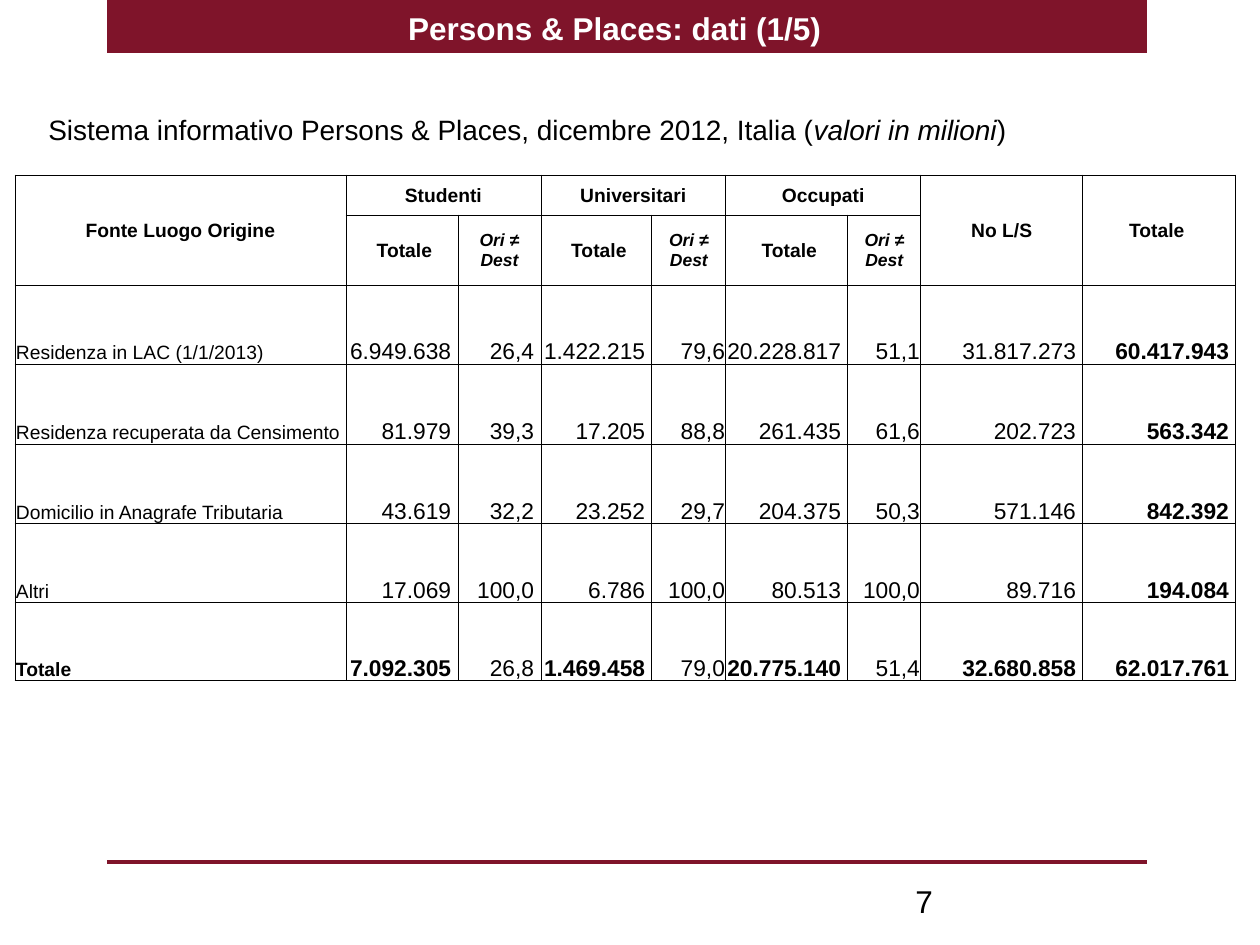
import pptx
import pptx.util
import pptx.dml.color
import pptx.enum.shapes
import pptx.enum.text
import pptx.oxml
import pptx.oxml.ns

COLORS = {"burgundy": "7F142A", "text": "000000", "title": "FFFFFF", "border": "000000"}
FONT = "Arial"
PIXELS_PER_INCH = 126
ALIGN = pptx.enum.text.PP_ALIGN
ANCHOR = pptx.enum.text.MSO_ANCHOR

COLUMN_WIDTHS = [331, 112, 83, 111, 74, 122, 73, 162, 153]
ROW_HEIGHTS = [40, 70, 79, 80, 80, 79, 78]
HEADER_ROWS = 2
TOTAL_ROW = len(ROW_HEIGHTS) - 1
PERCENT_COLUMNS = (2, 4, 6)
FLUSH_COLUMNS = (4, 6)
LAST_COLUMN = len(COLUMN_WIDTHS) - 1

GROUPS = ["Studenti", "Universitari", "Occupati"]
RECORDS = [
    ["Residenza in LAC (1/1/2013)", "6.949.638", "26,4", "1.422.215", "79,6",
     "20.228.817", "51,1", "31.817.273", "60.417.943"],
    ["Residenza recuperata da Censimento", "81.979", "39,3", "17.205", "88,8",
     "261.435", "61,6", "202.723", "563.342"],
    ["Domicilio in Anagrafe Tributaria", "43.619", "32,2", "23.252", "29,7",
     "204.375", "50,3", "571.146", "842.392"],
    ["Altri", "17.069", "100,0", "6.786", "100,0",
     "80.513", "100,0", "89.716", "194.084"],
    ["Totale", "7.092.305", "26,8", "1.469.458", "79,0",
     "20.775.140", "51,4", "32.680.858", "62.017.761"],
]


def px(value):
    return pptx.util.Emu(round(value * 914400 / PIXELS_PER_INCH))


def rgb(name):
    return pptx.dml.color.RGBColor.from_string(COLORS[name])


def set_attributes(target, values):
    for name, value in values.items():
        setattr(target, name, value)


def add_run(paragraph, text, size, color="text", **styles):
    run = paragraph.add_run()
    run.text = text
    set_attributes(run.font, {"name": FONT, "size": pptx.util.Pt(size), **styles})
    run.font.color.rgb = rgb(color)


def add_text(slide, box, runs, size, color="text", align=ALIGN.LEFT, **frame_values):
    shape = slide.shapes.add_textbox(*map(px, box))
    set_attributes(shape.text_frame, {"word_wrap": True, **frame_values})
    paragraph = shape.text_frame.paragraphs[0]
    paragraph.alignment = align
    for text, styles in runs:
        add_run(paragraph, text, size, color, **styles)


def add_band(slide, box):
    shape = slide.shapes.add_shape(
        pptx.enum.shapes.MSO_SHAPE.RECTANGLE, *map(px, box))
    shape.shadow.inherit = False
    shape.fill.solid()
    shape.fill.fore_color.rgb = rgb("burgundy")
    shape.line.fill.background()


def add_rule(slide, left, right, y):
    rule = slide.shapes.add_connector(
        pptx.enum.shapes.MSO_CONNECTOR.STRAIGHT, px(left), px(y), px(right), px(y))
    rule.line.color.rgb = rgb("burgundy")
    rule.line.width = pptx.util.Pt(2)
    properties = rule._element.spPr
    properties.append(properties.makeelement(pptx.oxml.ns.qn("a:effectLst"), {}))


def draw_borders(cell):
    properties = cell._tc.get_or_add_tcPr()
    for side in "LRTB":
        properties.append(pptx.oxml.parse_xml(
            f'<a:ln{side} {pptx.oxml.ns.nsdecls("a")} w="6350"><a:solidFill>'
            f'<a:srgbClr val="{COLORS["border"]}"/></a:solidFill></a:ln{side}>'))


def fill_cell(cell, text, size, align, anchor, left=1, right=1, **styles):
    set_attributes(cell, {
        "vertical_anchor": anchor,
        "margin_left": px(left),
        "margin_right": px(right),
        "margin_top": px(1),
        "margin_bottom": px(0),
    })
    paragraph = cell.text_frame.paragraphs[0]
    paragraph.alignment = align
    add_run(paragraph, text, size, **styles)


def fill_header_cell(cell, text, size=11, **options):
    fill_cell(cell, text, size, ALIGN.CENTER, ANCHOR.MIDDLE, bold=True, **options)


def fill_headers(table):
    for column, text, right in ((0, "Fonte Luogo Origine", 1),
                                (LAST_COLUMN - 1, "No L/S", 1),
                                (LAST_COLUMN, "Totale", 6)):
        table.cell(0, column).merge(table.cell(1, column))
        fill_header_cell(table.cell(0, column), text, right=right)
    for index, group in enumerate(GROUPS):
        column = 1 + 2 * index
        table.cell(0, column).merge(table.cell(0, column + 1))
        fill_header_cell(table.cell(0, column), group)
        fill_header_cell(table.cell(1, column), "Totale", left=6)
        fill_header_cell(table.cell(1, column + 1), "Ori ≠ Dest", size=10, italic=True)


def fill_records(table):
    for row, record in enumerate(RECORDS, HEADER_ROWS):
        for column, text in enumerate(record):
            cell = table.cell(row, column)
            bold = column == LAST_COLUMN or (
                row == TOTAL_ROW and column not in PERCENT_COLUMNS)
            if column == 0:
                fill_cell(cell, text, 11, ALIGN.LEFT, ANCHOR.BOTTOM, bold=bold)
            else:
                right = 1 if column in FLUSH_COLUMNS else 7
                fill_cell(cell, text, 13, ALIGN.RIGHT, ANCHOR.BOTTOM,
                          left=0, right=right, bold=bold)


def add_data_table(slide, left, top):
    table = slide.shapes.add_table(
        len(ROW_HEIGHTS), len(COLUMN_WIDTHS), px(left), px(top),
        px(sum(COLUMN_WIDTHS)), px(sum(ROW_HEIGHTS))).table
    set_attributes(table, {"first_row": False, "horz_banding": False})
    for column, width in zip(table.columns, COLUMN_WIDTHS):
        column.width = px(width)
    for row, height in zip(table.rows, ROW_HEIGHTS):
        row.height = px(height)
    for cell in table.iter_cells():
        draw_borders(cell)
        cell.fill.background()
    fill_headers(table)
    fill_records(table)


def main():
    presentation = pptx.Presentation()
    presentation.slide_width = px(1260)
    presentation.slide_height = px(945)
    slide = presentation.slides.add_slide(presentation.slide_layouts[6])

    add_band(slide, (107, 0, 1040, 53))
    add_rule(slide, 107, 1147, 862)
    add_text(slide, (36, 106, 1181, 47), [
        ("Sistema informativo Persons & Places, dicembre 2012, Italia (", {}),
        ("valori in milioni", {"italic": True}),
        (")", {}),
    ], 16)
    add_text(slide, (98, 0, 1043, 55), [("Persons & Places: dati (1/5)", {"bold": True})],
             18, "title", ALIGN.CENTER,
             vertical_anchor=ANCHOR.MIDDLE, margin_right=px(22))
    add_text(slide, (903, 876, 294, 50), [("7", {})], 18, vertical_anchor=ANCHOR.MIDDLE)
    add_data_table(slide, 15, 175)

    presentation.save("out.pptx")


if __name__ == "__main__":
    main()
